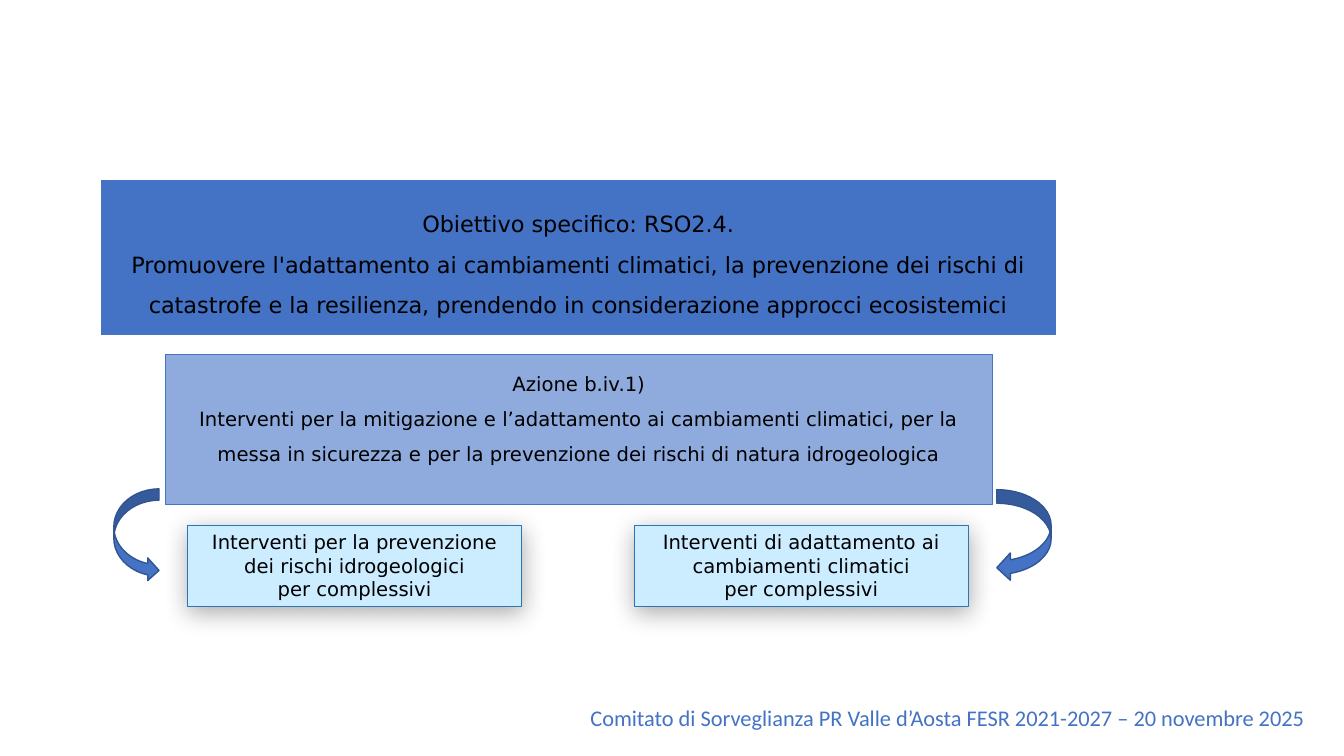
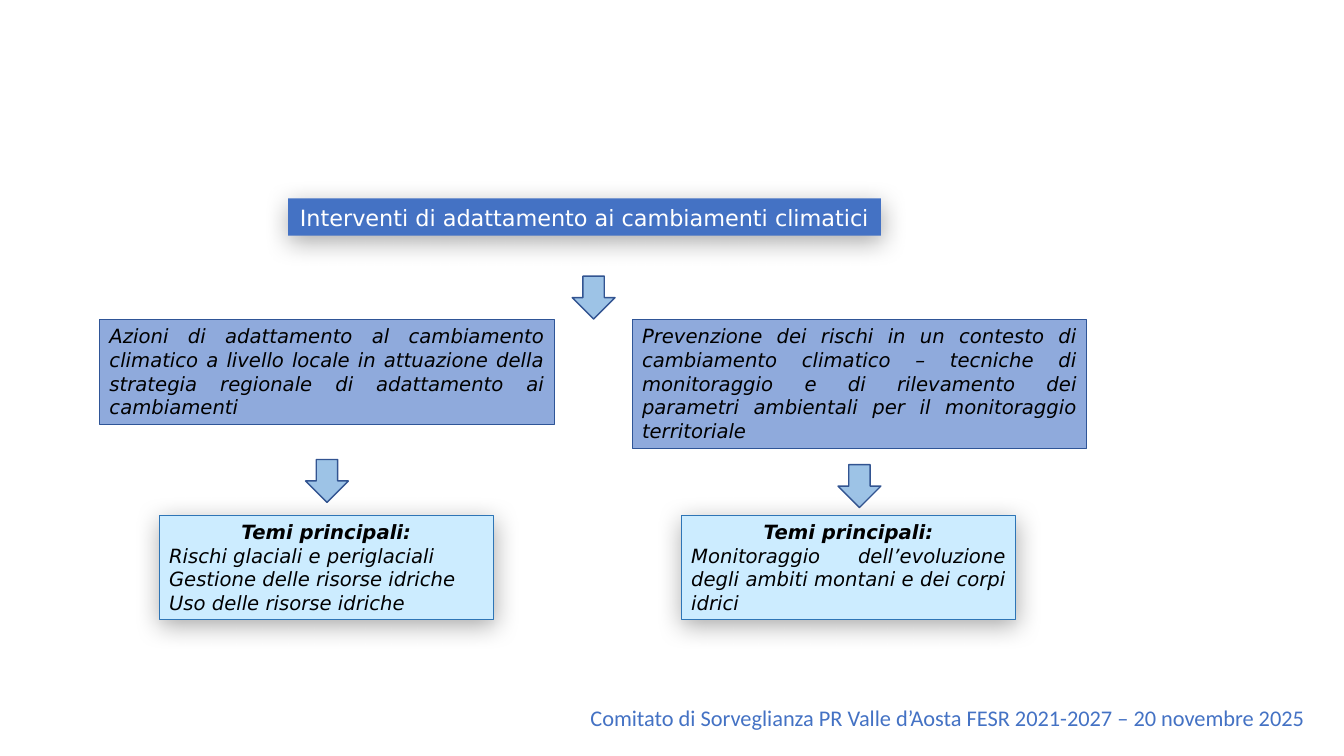
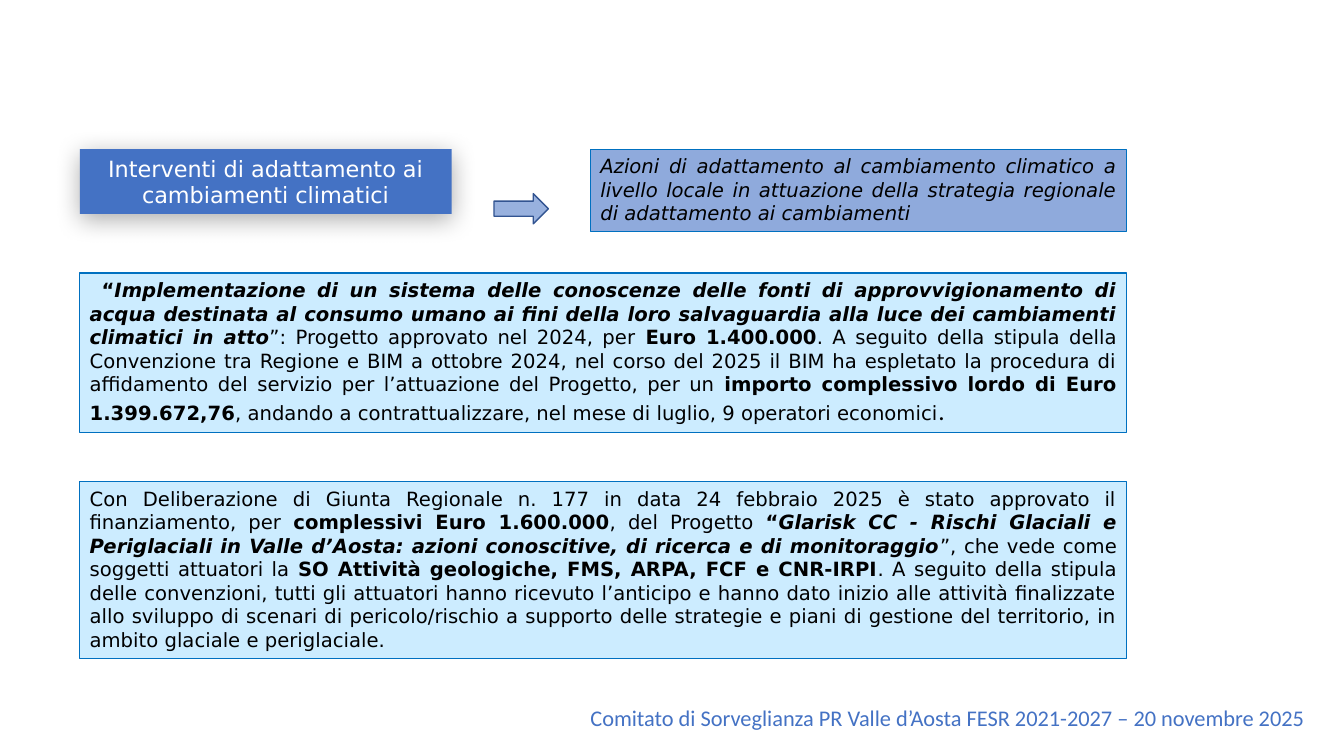
from dataclasses import dataclass

from lxml.etree import SubElement
from pptx import Presentation
from pptx.dml.color import RGBColor
from pptx.enum.shapes import MSO_SHAPE as Preset
from pptx.enum.text import MSO_ANCHOR as Anchor, MSO_AUTO_SIZE as AutoSize, PP_ALIGN as Align
from pptx.oxml.ns import qn
from pptx.util import Cm, Pt


@dataclass(frozen=True)
class Theme:
    blue: str = "4472C4"
    soft_blue: str = "8FAADC"
    ice: str = "CCECFF"
    arrow_blue: str = "9DC3E6"
    arrow_edge: str = "325491"
    navy: str = "2F5597"
    steel: str = "2E75B6"
    azure: str = "0070C0"
    black: str = "000000"
    white: str = "FFFFFF"
    font: str = "DejaVu Sans"
    footer_font: str = "Calibri"
    heading: int = 16
    body: int = 14
    stop: int = 18


THEME = Theme()
FOOTER = "Comitato di Sorveglianza PR Valle d’Aosta FESR 2021-2027 – 20 novembre 2025"
ADAPTATION = "Interventi di adattamento ai cambiamenti climatici"
LOCAL_ACTIONS = (
    "Azioni di adattamento al cambiamento climatico a livello locale in attuazione "
    "della strategia regionale di adattamento ai cambiamenti"
)


class Deck:
    """Hold the shared style and the current page, and draw each kind of element."""

    def __init__(self):
        self.file = Presentation()
        self.file.slide_width, self.file.slide_height = Cm(33.87), Cm(19.05)
        self.page = None

    def add_page(self):
        self.page = self.file.slides.add_slide(self.file.slide_layouts[5])
        box = self.page.shapes.add_textbox(*map(Cm, (14.63, 17.63, 18.75, 0.94)))
        self.fill_text(box, [FOOTER], THEME.blue, THEME.heading, Align.LEFT,
                       font=THEME.footer_font)

    def paint(self, shape, fill, line=None, width=0.5, shadow=False):
        shape.fill.solid()
        shape.fill.fore_color.rgb = RGBColor.from_string(fill)
        if line:
            shape.line.color.rgb = RGBColor.from_string(line)
            shape.line.width = Pt(width)
        else:
            shape.line.fill.background()
        properties = shape._element.spPr
        effects = properties.find(qn("a:effectLst"))
        if effects is None:
            effects = SubElement(properties, qn("a:effectLst"))
        if shadow:
            outer = SubElement(effects, qn("a:outerShdw"), blurRad=str(Pt(17.8)),
                               dist=str(Pt(4)), dir=str(87 * 60000), rotWithShape="0")
            color = SubElement(outer, qn("a:srgbClr"), val=THEME.black)
            SubElement(color, qn("a:alpha"), val="33000")

    def fill_text(self, shape, paras, color, size, align, anchor=Anchor.TOP, spacing=None,
                  italic=False, font=THEME.font):
        frame = shape.text_frame
        frame.word_wrap = True
        frame.auto_size = AutoSize.NONE
        frame.vertical_anchor = anchor
        for index, spans in enumerate(paras):
            para = frame.add_paragraph() if index else frame.paragraphs[0]
            para.alignment = align
            para.line_spacing = spacing
            para.font.name, para.font.size = font, Pt(size)
            para.font.color.rgb = RGBColor.from_string(color)
            para.font.italic = italic
            for text, style in [(spans, "")] if isinstance(spans, str) else spans:
                span = para.add_run()
                span.text = text
                if "b" in style:
                    span.font.bold = True
                if "i" in style:
                    span.font.italic = True
        return frame

    def title(self, place, paras, color=THEME.white, line=None, shadow=True, spacing=None):
        shape = self.page.shapes.title
        shape.left, shape.top, shape.width, shape.height = map(Cm, place)
        self.paint(shape, THEME.blue, line, 1.5, shadow)
        self.fill_text(shape, paras, color, THEME.heading, Align.CENTER, Anchor.MIDDLE, spacing)

    def box(self, place, paras, fill, line, width=0.5, shadow=False, align=Align.JUSTIFY,
            spacing=None, italic=False):
        shape = self.page.shapes.add_shape(Preset.RECTANGLE, *map(Cm, place))
        shape.shadow.inherit = False
        self.paint(shape, fill, line, width, shadow)
        return self.fill_text(shape, paras, THEME.black, THEME.body, align,
                              spacing=spacing, italic=italic)

    def card(self, place, paras, align=Align.CENTER, italic=False):
        return self.box(place, paras, THEME.ice, THEME.steel, shadow=True,
                        align=align, italic=italic)

    def arrow(self, preset, place, fill, flip=False, opacity=None):
        shape = self.page.shapes.add_shape(preset, *map(Cm, place))
        shape.shadow.inherit = False
        self.paint(shape, fill, THEME.arrow_edge, 1)
        if flip:
            shape._element.spPr.find(qn("a:xfrm")).set("flipH", "1")
        if opacity:
            color = shape._element.spPr.find(qn("a:solidFill"))[0]
            SubElement(color, qn("a:alpha"), val=str(opacity * 1000))

    def down_arrow(self, center, top):
        size = 1.08
        self.arrow(Preset.DOWN_ARROW, (center - size / 2, top, size, size), THEME.arrow_blue)


def objective_page(deck):
    deck.add_page()
    deck.title((2.51, 4.52, 24.13, 3.94), [
        "Obiettivo specifico: RSO2.4.",
        "Promuovere l'adattamento ai cambiamenti climatici, la prevenzione dei rischi di "
        "catastrofe e la resilienza, prendendo in considerazione approcci ecosistemici",
    ], THEME.black, THEME.white, shadow=False, spacing=1.5)
    deck.box((4.17, 8.94, 20.83, 3.76), [
        "Azione b.iv.1)",
        "Interventi per la mitigazione e l’adattamento ai cambiamenti climatici, per la "
        "messa in sicurezza e per la prevenzione dei rischi di natura idrogeologica",
    ], THEME.soft_blue, THEME.blue, align=Align.CENTER, spacing=1.5)
    measures = ["Interventi per la prevenzione dei rischi idrogeologici", ADAPTATION]
    for left, measure in zip((4.72, 15.98), measures):
        deck.card((left, 13.23, 8.43, 2.06), [measure, "per complessivi"])
    deck.arrow(Preset.CURVED_LEFT_ARROW, (25.12, 12.34, 1.37, 2.31), THEME.blue)
    deck.arrow(Preset.CURVED_LEFT_ARROW, (2.87, 12.32, 1.14, 2.34), THEME.blue, flip=True)


def themes_page(deck):
    deck.add_page()
    deck.title((7.26, 5, 14.94, 0.94), [ADAPTATION])
    deck.down_arrow(14.96, 6.96)
    width = 11.46
    columns = [
        (2.51, 2.64, 11.58, 4.01, LOCAL_ACTIONS,
         ["Rischi glaciali e periglaciali", "Gestione delle risorse idriche",
          "Uso delle risorse idriche"]),
        (15.93, 3.25, 11.71, 17.17,
         "Prevenzione dei rischi in un contesto di cambiamento climatico – tecniche di "
         "monitoraggio e di rilevamento dei parametri ambientali per il monitoraggio territoriale",
         ["Monitoraggio dell’evoluzione degli ambiti montani e dei corpi idrici"]),
    ]
    for left, height, arrow_top, card_left, action, topics in columns:
        deck.box((left, 8.05, width, height), [action], THEME.soft_blue, THEME.navy, italic=True)
        deck.down_arrow(left + width / 2, arrow_top)
        frame = deck.card((card_left, 12.98, 8.43, 2.64),
                          [[("Temi principali:", "b")], *topics], Align.JUSTIFY, italic=True)
        frame.paragraphs[0].alignment = Align.CENTER


def projects_page(deck):
    deck.add_page()
    deck.title((2.01, 3.76, 9.37, 1.63), [ADAPTATION])
    deck.arrow(Preset.RIGHT_ARROW, (12.45, 4.88, 1.37, 0.76), THEME.blue, opacity=55)
    deck.box((14.88, 3.76, 13.51, 2.06), [LOCAL_ACTIONS], THEME.soft_blue, THEME.azure, italic=True)
    water = [
        ("“", "b"),
        ("Implementazione di un sistema delle conoscenze delle fonti di approvvigionamento di "
         "acqua destinata al consumo umano ai fini della loro salvaguardia alla luce dei "
         "cambiamenti climatici in atto", "bi"),
        ("”: Progetto approvato nel 2024, per", ""),
        (" Euro 1.400.000", "b"),
        (". A seguito della stipula della Convenzione tra Regione e BIM a ottobre 2024, nel corso "
         "del 2025 il BIM ha espletato la procedura di affidamento del servizio per l’attuazione "
         "del Progetto, per un ", ""),
        ("importo complessivo lordo di Euro 1.399.672,76", "b"),
        (", andando a contrattualizzare, nel mese di luglio, 9 operatori economici", ""),
        (".", ""),
    ]
    glaciers = [
        ("Con Deliberazione di Giunta Regionale n. 177 in data 24 febbraio 2025 è stato approvato "
         "il finanziamento, per ", ""),
        ("complessivi Euro 1.600.000", "b"),
        (", del Progetto ", ""),
        ("“", "b"),
        ("Glarisk CC - Rischi Glaciali e Periglaciali in Valle d’Aosta: azioni conoscitive, "
         "di ricerca e di monitoraggio", "bi"),
        ("”, che vede come soggetti attuatori la ", ""),
        ("SO Attività geologiche, FMS, ARPA, FCF e CNR-IRPI", "b"),
        (". A seguito della stipula delle convenzioni, tutti gli attuatori hanno ricevuto "
         "l’anticipo e hanno dato inizio alle attività finalizzate allo sviluppo di scenari di "
         "pericolo/rischio a supporto delle strategie e piani di gestione del territorio, in "
         "ambito glaciale e periglaciale.", ""),
    ]
    water_frame, _ = [
        deck.box((2.01, top, 26.39, height), [spans], THEME.ice, THEME.azure, 0.75)
        for top, height, spans in ((6.88, 4.01, water), (12.14, 4.45, glaciers))
    ]
    para = water_frame.paragraphs[0]
    para._p.get_or_add_pPr().set("indent", str(Cm(0.3)))
    stop = para.runs[-1]
    stop.font.name, stop.font.size = THEME.footer_font, Pt(THEME.stop)


def main():
    deck = Deck()
    for build in (objective_page, themes_page, projects_page):
        build(deck)
    deck.file.save("out.pptx")


if __name__ == "__main__":
    main()
